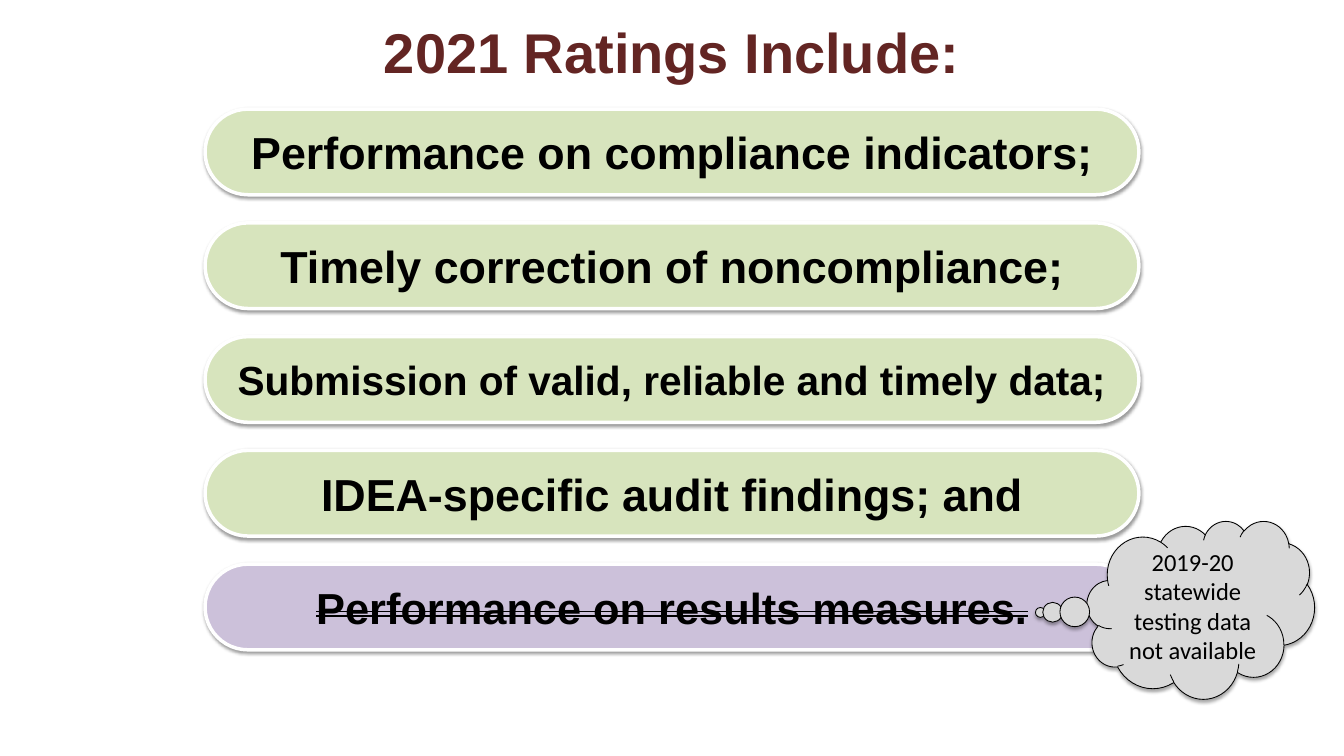
from lxml.etree import SubElement
from pptx import Presentation
from pptx.dml.color import RGBColor
from pptx.enum.shapes import MSO_SHAPE as Preset
from pptx.enum.text import MSO_ANCHOR as Anchor, MSO_AUTO_SIZE as AutoSize, PP_ALIGN as Align
from pptx.oxml.ns import qn
from pptx.util import Cm, Pt

COLORS = {
    "title": "632523",
    "included": "D7E4BD",
    "excluded": "CCC1DA",
    "note": "D9D9D9",
    "white": "FFFFFF",
    "black": "000000",
}
RATINGS = [
    ("Performance on compliance indicators;", 38.4, "included"),
    ("Timely correction of noncompliance;", 38.4, "included"),
    ("Submission of valid, reliable and timely data;", 34.8, "included"),
    ("IDEA-specific audit findings; and", 38.4, "included"),
    ("Performance on results measures.", 37.2, "excluded"),
]
PILL_TOP, PILL_STEP = 3.3, 3.44


def rgb(name):
    return RGBColor.from_string(COLORS[name])


def write_text(frame, text, size, font="Arial", color="black", bold=True,
               strike=False, anchor=Anchor.MIDDLE, margins=(0.3, 0.15)):
    """Fill the frame with one centred run; margins are (sides, top and bottom) in cm."""
    frame.word_wrap = True
    frame.vertical_anchor = anchor
    frame.margin_left = frame.margin_right = Cm(margins[0])
    frame.margin_top = frame.margin_bottom = Cm(margins[1])
    paragraph = frame.paragraphs[0]
    paragraph.alignment = Align.CENTER
    run = paragraph.add_run()
    run.text = text
    run.font.name = font
    run.font.size = Pt(size)
    run.font.bold = bold
    run.font.color.rgb = rgb(color)
    if strike:
        run.font._element.set("strike", "dblStrike")


def add_shadow(shape, opacity, distance):
    """Give the shape a soft black shadow straight below it."""
    shape.shadow.inherit = False
    effects = shape._element.spPr.find(qn("a:effectLst"))
    shadow = SubElement(effects, qn("a:outerShdw"), blurRad=str(Pt(3.1)),
                        dist=str(Pt(distance)), dir="5400000", rotWithShape="0")
    color = SubElement(shadow, qn("a:srgbClr"), val=COLORS["black"])
    SubElement(color, qn("a:alpha"), val=str(opacity * 1000))


class RatingsSlide:
    def __init__(self, presentation):
        self.slide = presentation.slides.add_slide(presentation.slide_layouts[5])

    def title(self, text, box):
        shape = self.slide.shapes.title
        shape.left, shape.top, shape.width, shape.height = map(Cm, box)
        write_text(shape.text_frame, text, 48, color="title",
                   anchor=Anchor.TOP, margins=(0, 0))
        shape.text_frame.auto_size = AutoSize.SHAPE_TO_FIT_TEXT

    def shape(self, preset, box, adjustments, fill, line, line_width):
        shape = self.slide.shapes.add_shape(preset, *map(Cm, box))
        for index, value in enumerate(adjustments):
            shape.adjustments[index] = value
        shape.fill.solid()
        shape.fill.fore_color.rgb = rgb(fill)
        shape.line.color.rgb = rgb(line)
        shape.line.width = Pt(line_width)
        return shape

    def pill(self, text, size, fill, top):
        shape = self.shape(Preset.ROUNDED_RECTANGLE, (6.2, top, 28.24, 2.59),
                           [0.5], fill, "white", 3)
        add_shadow(shape, opacity=38, distance=1.6)
        write_text(shape.text_frame, text, size, strike=fill == "excluded")

    def thought_cloud(self, text, box, tail):
        shape = self.shape(Preset.CLOUD_CALLOUT, box, tail, "note", "black", 0.75)
        add_shadow(shape, opacity=35, distance=1.8)
        write_text(shape.text_frame, text, 21, font="Calibri", bold=False,
                   margins=(0.25, 0.13))


def main():
    presentation = Presentation()
    presentation.slide_width, presentation.slide_height = Cm(40.64), Cm(22.86)
    slide = RatingsSlide(presentation)
    slide.title("2021 Ratings Include:", (6.6, 0.53, 27.43, 2.06))
    for row, (text, size, fill) in enumerate(RATINGS):
        slide.pill(text, size, fill, PILL_TOP + row * PILL_STEP)
    slide.thought_cloud("2019-20 statewide testing data not available",
                        (32.87, 15.75, 6.88, 5.38), tail=(-0.705, 0.015))
    presentation.save("out.pptx")


if __name__ == "__main__":
    main()
